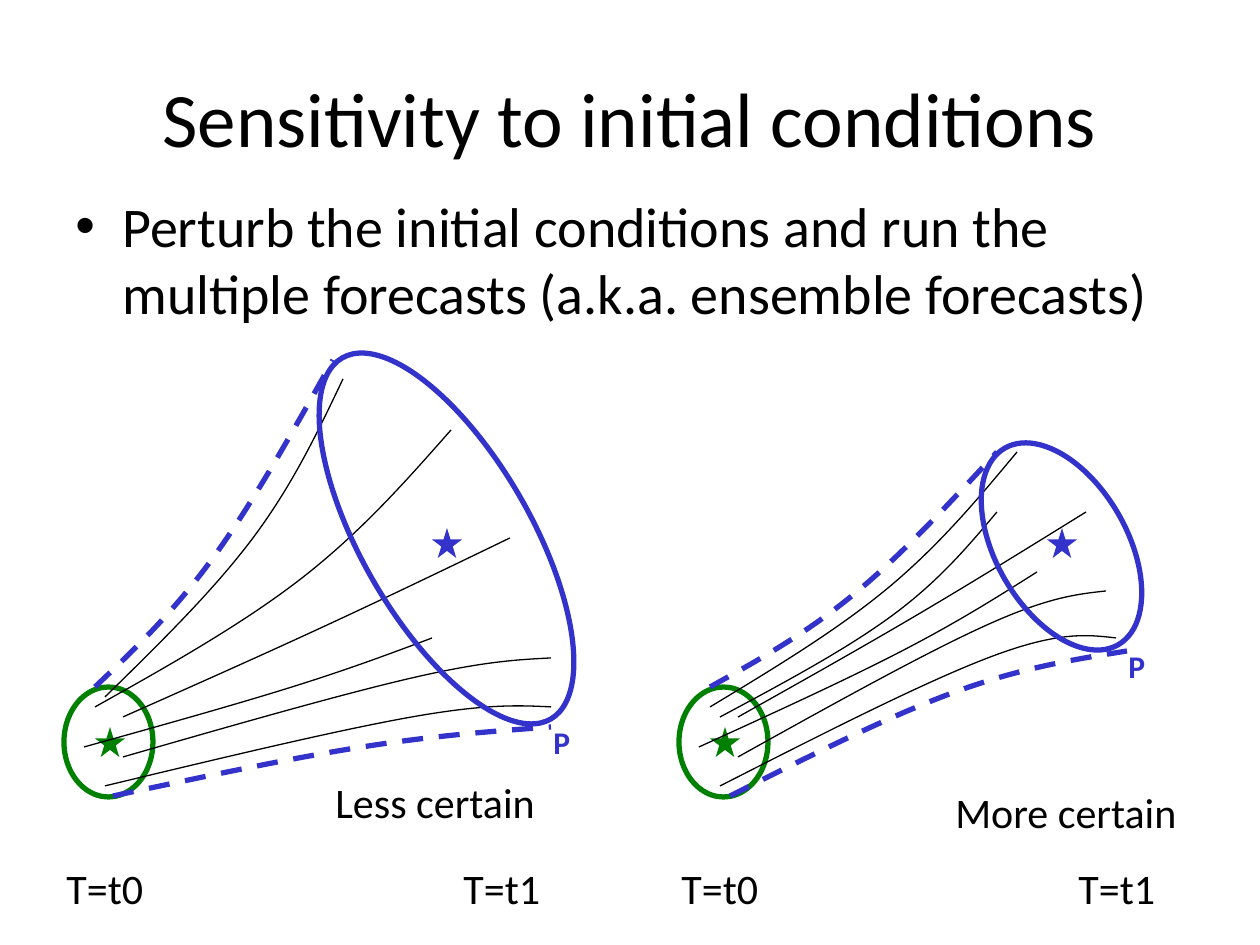
from lxml import etree
from pptx import Presentation
from pptx.dml.color import RGBColor
from pptx.enum.dml import MSO_LINE
from pptx.enum.shapes import MSO_SHAPE
from pptx.enum.text import MSO_ANCHOR, PP_ALIGN
from pptx.oxml.ns import qn
from pptx.util import Pt

PX = 914400 / 126
DASH = MSO_LINE.DASH
OVAL = MSO_SHAPE.OVAL
STAR = MSO_SHAPE.STAR_5_POINT
MIDDLE, TOP = MSO_ANCHOR.MIDDLE, MSO_ANCHOR.TOP
LEFT, CENTER = PP_ALIGN.LEFT, PP_ALIGN.CENTER
BLACK, GREEN, BLUE = "000000", "008000", "3333CC"
FONT = "Calibri"
PANEL_STEP = 615
STAR_SIZE = 30

LESS_CERTAIN = {
    "caption": ("Less certain", 323, 770),
    "members": [
        [(105, 697), (253, 538), (343, 379)],
        [(95, 707), (302, 578), (451, 430)],
        [(123, 717), (323, 627), (510, 538)],
        [(84, 747), (292, 687), (432, 638)],
        [(123, 757), (412, 678), (551, 658)],
        [(105, 786), (412, 717), (551, 707)],
    ],
    "bounds": [
        [(95, 687), (213, 558), (333, 360)],
        [(113, 796), (362, 747), (551, 727)],
    ],
    "spread": (362, 330, 169, 417),
    "p_label": (541, 717),
}
MORE_CERTAIN = {
    "caption": ("More certain", 328, 780),
    "members": [
        [(105, 717), (278, 615), (382, 512)],
        [(95, 707), (273, 588), (402, 452)],
        [(123, 717), (302, 615), (471, 512)],
        [(84, 747), (287, 651), (422, 572)],
        [(123, 757), (372, 625), (491, 591)],
        [(105, 786), (378, 656), (501, 638)],
    ],
    "bounds": [
        [(95, 687), (238, 595), (382, 452)],
        [(115, 796), (340, 692), (512, 651)],
    ],
    "spread": (381, 433, 131, 227),
    "p_label": (501, 641),
}


def px(n):
    return round(n * PX)


def rgb(value):
    return RGBColor.from_string(value)


def set_text(s, text, size=24, color=BLACK, bold=False, align=LEFT, anchor=TOP):
    tf = s.text_frame
    tf.word_wrap = True
    tf.vertical_anchor = anchor
    p = tf.paragraphs[0]
    p.alignment = align
    r = p.add_run()
    r.text = text
    r.font.name = FONT
    r.font.size = Pt(size)
    r.font.bold = bold
    r.font.color.rgb = rgb(color)
    return p


def add_text(slide, text, x, y, w, h=63, **fmt):
    s = slide.shapes.add_textbox(px(x), px(y), px(w), px(h))
    return set_text(s, text, **fmt)


def add_bullet(p, indent):
    pPr = p._p.get_or_add_pPr()
    pPr.set("marL", str(px(indent)))
    pPr.set("indent", str(-px(indent)))
    etree.SubElement(pPr, qn("a:buFont"), typeface="Arial")
    etree.SubElement(pPr, qn("a:buChar"), char="•")


def set_outline(s, color, width, dash=None):
    s.shadow.inherit = False
    s.fill.background()
    s.line.color.rgb = rgb(color)
    s.line.width = Pt(width)
    if dash:
        s.line.dash_style = dash


def add_ellipse(slide, x, y, w, h, color, rotation=0):
    s = slide.shapes.add_shape(OVAL, px(x), px(y), px(w), px(h))
    s.rotation = rotation
    set_outline(s, color, 3)


def add_star(slide, x, y, color):
    s = slide.shapes.add_shape(STAR, px(x), px(y), px(STAR_SIZE), px(STAR_SIZE))
    s.shadow.inherit = False
    s.fill.solid()
    s.fill.fore_color.rgb = rgb(color)
    s.line.fill.background()


def bezier_points(start, mid, end):
    def controls(a, m, b):
        step = (b - a) / 6
        before, after = m - step, m + step
        return a, (a + before) / 2, before, m, after, (after + b) / 2, b

    return list(zip(*map(controls, start, mid, end)))


def add_curve(slide, points, dx, color, width, dash=None):
    pts = [(px(x + dx), px(y)) for x, y in bezier_points(*points)]
    builder = slide.shapes.build_freeform(*pts[0])
    builder.add_line_segments(pts[1:], close=False)
    s = builder.convert_to_shape()
    segments = list(s._element.iter(qn("a:lnTo")))
    for i in range(0, len(segments), 3):
        curve = etree.Element(qn("a:cubicBezTo"))
        segments[i].addprevious(curve)
        for segment in segments[i:i + 3]:
            curve.append(segment[0])
            segment.getparent().remove(segment)
    set_outline(s, color, width, dash)


def add_panel(slide, dx, panel):
    add_ellipse(slide, 64 + dx, 687, 89, 110, GREEN)
    add_star(slide, 95 + dx, 727, GREEN)
    for points in panel["members"]:
        add_curve(slide, points, dx, BLACK, 0.75)
    for text, x in (("T=t0", 54), ("T=t1", 451)):
        add_text(slide, text, x + dx, 856, 120)
    for points in panel["bounds"]:
        add_curve(slide, points, dx, BLUE, 3, DASH)
    x, y, w, h = panel["spread"]
    add_ellipse(slide, x + dx, y, w, h, BLUE, rotation=330)
    add_star(slide, 432 + dx, 528, BLUE)
    x, y = panel["p_label"]
    add_text(slide, "P", x + dx, y, 59, size=18, color=BLUE, bold=True)
    text, x, y = panel["caption"]
    add_text(slide, text, x + dx, y, 318)


def main():
    prs = Presentation()
    prs.slide_width, prs.slide_height = px(1260), px(945)
    slide = prs.slides.add_slide(prs.slide_layouts[5])
    title = slide.shapes.title
    title.left, title.top, title.width, title.height = map(px, (63, 38, 1134, 158))
    set_text(title, "Sensitivity to initial conditions", size=44, align=CENTER, anchor=MIDDLE)
    p = add_text(
        slide,
        "Perturb the initial conditions and run the multiple forecasts (a.k.a. ensemble forecasts)",
        63, 185, 1134, 159, size=32,
    )
    add_bullet(p, 47)
    for i, panel in enumerate((LESS_CERTAIN, MORE_CERTAIN)):
        add_panel(slide, i * PANEL_STEP, panel)
    prs.save("out.pptx")


if __name__ == "__main__":
    main()
